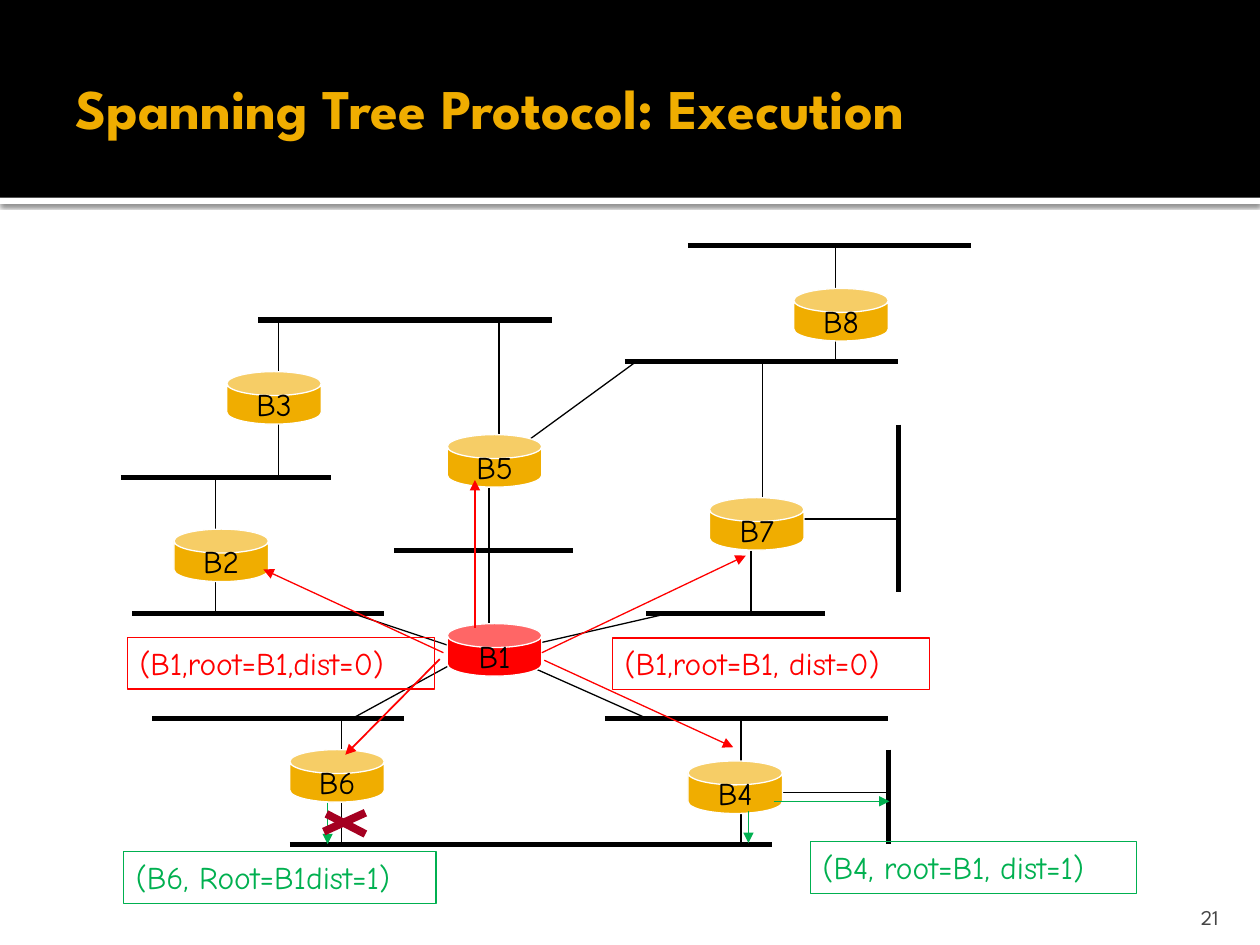
from lxml import etree
from pptx import Presentation
from pptx.dml.color import RGBColor
from pptx.enum.shapes import MSO_CONNECTOR, MSO_SHAPE
from pptx.enum.text import MSO_ANCHOR as Anchor, PP_ALIGN as Align
from pptx.oxml import parse_xml
from pptx.oxml.ns import nsdecls, qn
from pptx.util import Pt

BLACK, WHITE, GOLD, GRAY = "000000", "FFFFFF", "F0AD00", "454545"
RED, GREEN, DARK_RED = "FF0000", "00B050", "A50021"
color = RGBColor.from_string

presentation = Presentation()
presentation.slide_width, presentation.slide_height = Pt(720), Pt(540)
slide = presentation.slides.add_slide(presentation.slide_layouts[6])
shapes = slide.shapes


def add_line(x1, y1, x2, y2, line_color=BLACK, width=0.75, arrow=False):
    connector = shapes.add_connector(
        MSO_CONNECTOR.STRAIGHT, Pt(x1), Pt(y1), Pt(x2), Pt(y2))
    connector.line.color.rgb = color(line_color)
    connector.line.width = Pt(width)
    if arrow:
        etree.SubElement(connector.line._ln, qn("a:tailEnd"), type="triangle")
    etree.SubElement(connector._element.spPr, qn("a:effectLst"))


def set_text(shape, text, text_color, frame_format, font_format, align=Align.LEFT):
    frame = shape.text_frame
    for name, value in frame_format.items():
        setattr(frame, name, value)
    paragraph = frame.paragraphs[0]
    paragraph.alignment = align
    run = paragraph.add_run()
    run.text = text
    for name, value in font_format.items():
        setattr(run.font, name, value)
    run.font.color.rgb = color(text_color)


# Header band, with a shadowed white strip under it
for top, height, fill in [(113, 3.6, WHITE), (0, 113, BLACK)]:
    band = shapes.add_shape(MSO_SHAPE.RECTANGLE, 0, Pt(top), Pt(720), Pt(height))
    band.shadow.inherit = False
    band.fill.solid()
    band.fill.fore_color.rgb = color(fill)
    band.line.fill.background()
    if fill == WHITE:
        effects = band._element.spPr.find(qn("a:effectLst"))
        effects.append(parse_xml(
            f'<a:outerShdw {nsdecls("a")} blurRad="31750" dist="10160" dir="5400000">'
            f'<a:srgbClr val="{BLACK}"><a:alpha val="60000"/></a:srgbClr></a:outerShdw>'))

# Title and slide number
title = shapes.add_textbox(Pt(36), Pt(12.2), Pt(648), Pt(98.6))
set_text(title, "Spanning Tree Protocol: Execution", GOLD,
         {"word_wrap": True, "vertical_anchor": Anchor.MIDDLE, "margin_right": Pt(3.6)},
         {"name": "League Spartan", "size": Pt(32), "bold": True})
number = shapes.add_textbox(Pt(645.8), Pt(509.8), Pt(57.6), Pt(21.6))
set_text(number, "21", GRAY,
         {"word_wrap": True, "vertical_anchor": Anchor.BOTTOM, "margin_bottom": 0},
         {"name": "League Spartan", "size": Pt(12)}, Align.RIGHT)

# Network segments: y, left, right
for y, left, right in [
        (140.4, 393.1, 555.1), (182.9, 147.6, 315.4), (206.6, 357.1, 513.4),
        (272.9, 69.1, 189.4), (314.6, 225.4, 327.6), (350.6, 75.6, 219.6),
        (350.6, 369.4, 471.6), (410.4, 87.1, 231.1), (410.4, 345.6, 507.6),
        (482.4, 165.6, 441.4)]:
    add_line(left, y, right, y, width=3)
for x, top, bottom in [(513.4, 242.6, 338.4), (507.6, 428.4, 482.4)]:
    add_line(x, top, x, bottom, width=3)

# Upright links between bridges and segments: x, top, bottom
for x, top, bottom in [
        (159.1, 182.9, 212.4), (159.1, 230.4, 272.9), (123.1, 272.9, 302.4),
        (123.1, 320.4, 350.6), (285.1, 182.9, 248.4), (279.4, 278.6, 314.6),
        (279.4, 314.6, 356.4), (435.6, 206.6, 284.4), (429.1, 314.6, 350.6),
        (195.1, 410.4, 428.4), (195.1, 458.6, 482.4), (423.4, 410.4, 434.9),
        (423.4, 464.4, 482.4), (477.4, 140.4, 164.9), (477.4, 194.4, 206.6)]:
    add_line(x, top, x, bottom)

# Level and slanted links
for ends in [
        (297.4, 254.9, 363.6, 206.6), (201.6, 350.6, 255.6, 368.6),
        (201.6, 410.4, 255.6, 380.9), (303.1, 368.6, 381.6, 350.6),
        (303.1, 380.9, 369.4, 410.4), (441.4, 452.9, 507.6, 452.9),
        (459.4, 296.6, 513.4, 296.6)]:
    add_line(*ends)

# Bridges, with the root in red
body_font = {"name": "Comic Neue", "size": Pt(18)}
for name, left, top in [
        ("B3", 129.6, 212.4), ("B5", 255.6, 248.4), ("B7", 405.4, 284.4),
        ("B2", 99.4, 302.4), ("B1", 255.6, 356.4), ("B6", 165.6, 428.4),
        ("B4", 393.1, 434.9), ("B8", 453.6, 164.9)]:
    bridge = shapes.add_shape(MSO_SHAPE.CAN, Pt(left), Pt(top), Pt(54), Pt(30))
    bridge.adjustments[0] = 0.455
    bridge.shadow.inherit = False
    bridge.fill.solid()
    bridge.fill.fore_color.rgb = color(RED if name == "B1" else GOLD)
    bridge.line.color.rgb = color(WHITE)
    bridge.line.width = Pt(0.75)
    set_text(bridge, name, BLACK,
             {"word_wrap": False, "vertical_anchor": Anchor.MIDDLE},
             body_font, Align.CENTER)

# Message labels
for text, left, top, width, label_color in [
        ("(B1,root=B1, dist=0)", 349.9, 364.5, 181.4, RED),
        ("(B1,root=B1,dist=0)", 72.7, 364.2, 175.7, RED),
        ("(B4, root=B1, dist=1)", 463, 481, 186.5, GREEN),
        ("(B6, Root=B1dist=1)", 70.6, 486.7, 178.6, GREEN)]:
    label = shapes.add_textbox(Pt(left), Pt(top), Pt(width), Pt(29.5))
    label.line.color.rgb = color(label_color)
    label.line.width = Pt(0.75)
    set_text(label, text, label_color, {"word_wrap": True}, body_font)

# Message arrows: red from the root, green passed on
for *ends, arrow_color, width in [
        (251.3, 376.6, 197.3, 431.3, RED, 1),
        (253.4, 373, 150.5, 325.4, RED, 0.75),
        (309.6, 373, 426.2, 317.5, RED, 0.75),
        (311, 377.3, 419, 427, RED, 0.75),
        (271.4, 358.6, 271.4, 274.3, RED, 0.75),
        (442.1, 457.9, 508.3, 457.9, GREEN, 0.75),
        (427.7, 463.7, 427.7, 481.7, GREEN, 0.75),
        (187.2, 458.6, 187.2, 482.4, GREEN, 0.75)]:
    add_line(*ends, arrow_color, width, arrow=True)

# Cross on the blocked port
add_line(186.5, 465.1, 208.8, 476.6, DARK_RED, 4.5)
add_line(185, 475.2, 208.8, 464.4, DARK_RED, 4.5)

presentation.save("out.pptx")
